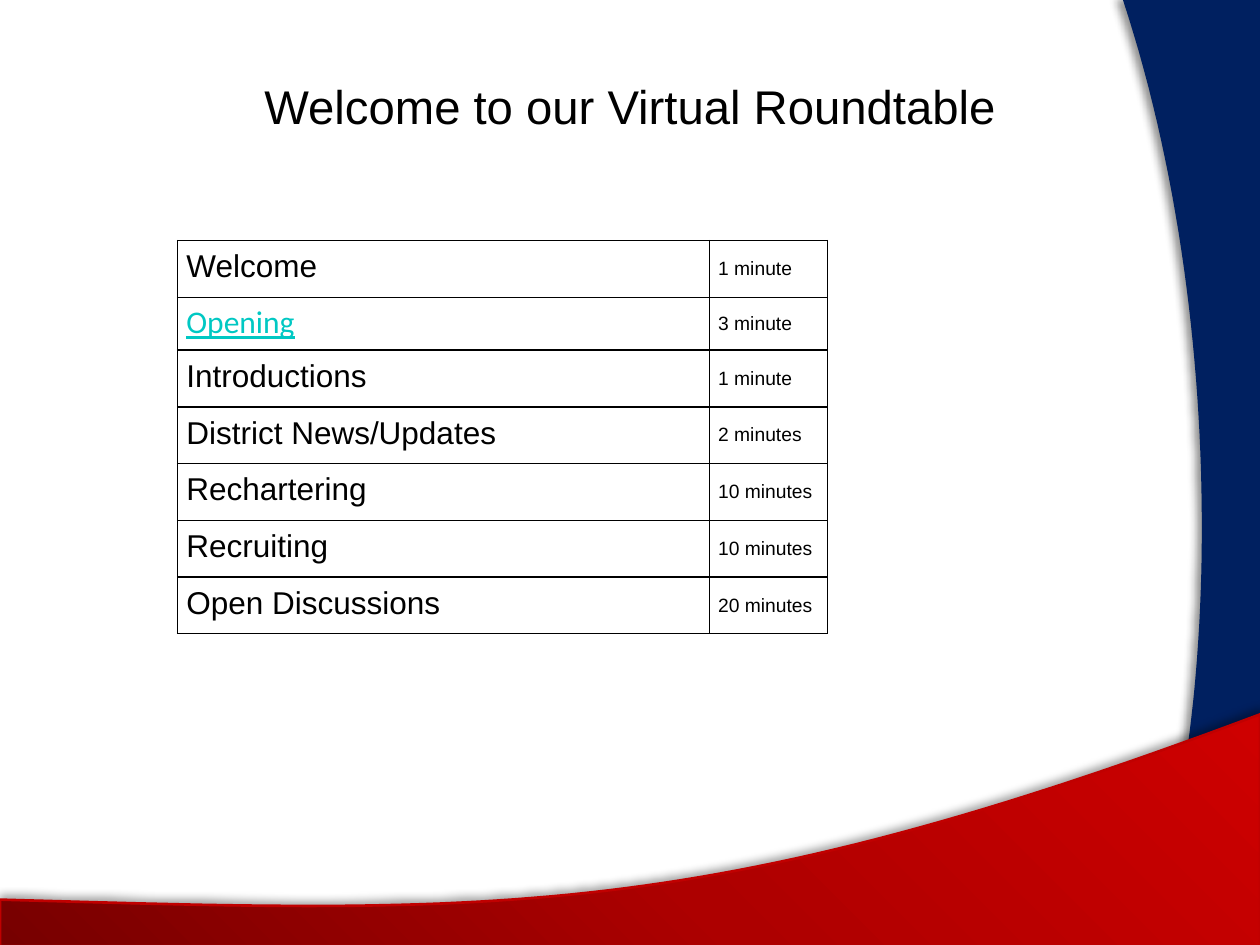
from lxml.etree import SubElement
from pptx import Presentation
from pptx.dml.color import RGBColor
from pptx.enum.text import MSO_ANCHOR as Anchor, PP_ALIGN as Align
from pptx.oxml import parse_xml
from pptx.oxml.ns import nsdecls, qn
from pptx.util import Inches, Pt

AGENDA = [
    ("Welcome", "1 minute"),
    ("Opening", "3 minute"),
    ("Introductions", "1 minute"),
    ("District News/Updates", "2 minutes"),
    ("Rechartering", "10 minutes"),
    ("Recruiting", "10 minutes"),
    ("Open Discussions", "20 minutes"),
]
LINKED_TOPIC = "Opening"
COLUMN_WIDTHS = (4.22, 0.94)
ROW_HEIGHT, LINKED_ROW_HEIGHT = 0.45, 0.42
CURVE_STEPS = 60


def color(hex_string):
    return RGBColor.from_string(hex_string)


def bezier(start, control_1, control_2, end):
    """Return points along a cubic curve, both ends included."""
    points = []
    for step in range(CURVE_STEPS + 1):
        t = step / CURVE_STEPS
        weights = ((1 - t) ** 3, 3 * t * (1 - t) ** 2, 3 * t * t * (1 - t), t ** 3)
        points.append(tuple(
            sum(w * value for w, value in zip(weights, axis))
            for axis in zip(start, control_1, control_2, end)))
    return points


def add_swoosh(slide, points, line_color):
    first, *rest = [(Inches(x), Inches(y)) for x, y in points]
    builder = slide.shapes.build_freeform(*first, scale=1.0)
    builder.add_line_segments(rest, close=True)
    swoosh = builder.convert_to_shape()
    swoosh.line.color.rgb = color(line_color)
    swoosh.line.width = Pt(1.5)
    return swoosh


def fill_gradient(shape, stops, angle):
    """Fill with (percent, hex) stops; the angle runs clockwise."""
    stop_xml = "".join(
        f'<a:gs pos="{percent * 1000}"><a:srgbClr val="{shade}"/></a:gs>'
        for percent, shade in stops)
    gradient = parse_xml(
        f'<a:gradFill {nsdecls("a")} rotWithShape="1"><a:gsLst>{stop_xml}</a:gsLst>'
        f'<a:lin ang="{angle * 60000}" scaled="0"/></a:gradFill>')
    shape._element.spPr.find(qn("a:custGeom")).addnext(gradient)


def add_shadow(shape, opacity, blur, distance, angle):
    shape._element.spPr.append(parse_xml(
        f'<a:effectLst {nsdecls("a")}><a:outerShdw blurRad="{Pt(blur)}" '
        f'dist="{Pt(distance)}" dir="{angle * 60000}" algn="ctr" rotWithShape="0">'
        f'<a:srgbClr val="000000"><a:alpha val="{opacity * 1000}"/></a:srgbClr>'
        f'</a:outerShdw></a:effectLst>'))


def add_run(paragraph, text, size, font="Arial", shade="000000"):
    run = paragraph.add_run()
    run.text = text
    run.font.size = Pt(size)
    run.font.name = font
    run.font.color.rgb = color(shade)
    return run


def add_title(slide, text):
    title = slide.shapes.add_textbox(Inches(1), Inches(0.22), Inches(8), Inches(1.23))
    frame = title.text_frame
    frame.word_wrap = True
    frame.vertical_anchor = Anchor.MIDDLE
    frame.margin_left = frame.margin_right = Inches(0.07)
    frame.margin_top = frame.margin_bottom = Inches(0.04)
    paragraph = frame.paragraphs[0]
    paragraph.alignment = Align.CENTER
    add_run(paragraph, text, 27)


def style_cell(cell):
    """Leave the cell unfilled, with thin black borders and even margins."""
    cell.margin_left = cell.margin_right = Inches(0.07)
    cell.margin_top = cell.margin_bottom = Inches(0.07)
    cell.fill.background()
    properties = cell._tc.get_or_add_tcPr()
    for position, side in enumerate(("lnL", "lnR", "lnT", "lnB")):
        border = SubElement(properties, qn(f"a:{side}"), w=str(Pt(1)))
        solid = SubElement(border, qn("a:solidFill"))
        SubElement(solid, qn("a:srgbClr"), val="000000")
        properties.insert(position, border)


def add_agenda(slide):
    heights = [LINKED_ROW_HEIGHT if topic == LINKED_TOPIC else ROW_HEIGHT
               for topic, _ in AGENDA]
    table = slide.shapes.add_table(
        len(AGENDA), len(COLUMN_WIDTHS), Inches(1.41), Inches(1.91),
        Inches(sum(COLUMN_WIDTHS)), Inches(sum(heights))).table
    table.first_row = table.horz_banding = False
    for column, width in zip(table.columns, COLUMN_WIDTHS):
        column.width = Inches(width)

    for row, height, (topic, duration) in zip(table.rows, heights, AGENDA):
        row.height = Inches(height)
        topic_cell, duration_cell = row.cells
        for cell in row.cells:
            style_cell(cell)
        paragraph = topic_cell.text_frame.paragraphs[0]
        if topic == LINKED_TOPIC:
            paragraph.line_spacing = 0.9
            add_run(paragraph, topic, 18, "Calibri", "00C8C3").font.underline = True
        else:
            add_run(paragraph, topic, 18)
        duration_cell.vertical_anchor = Anchor.MIDDLE
        add_run(duration_cell.text_frame.paragraphs[0], duration, 11)


def main():
    deck = Presentation()
    deck.slide_width, deck.slide_height = Inches(10), Inches(7.5)
    slide = deck.slides.add_slide(deck.slide_layouts[6])

    right_edge = bezier((9.03, 7.49), (9.65, 6.18), (9.83, 2.74), (8.92, -0.01))
    blue_swoosh = add_swoosh(slide, [(10, 0.01), (10, 7.49), *right_edge], "002060")
    blue_swoosh.fill.solid()
    blue_swoosh.fill.fore_color.rgb = color("002060")
    add_shadow(blue_swoosh, 44, 5, 4, 180)

    top_edge = bezier((10, 5.67), (5.59, 7.33), (3.91, 7.25), (0, 7.14))
    red_swoosh = add_swoosh(slide, [(0, 7.51), (10, 7.51), *top_edge], "C00000")
    fill_gradient(red_swoosh, [(0, "770000"), (50, "AD0000"), (100, "CE0000")], 315)
    add_shadow(red_swoosh, 35, 5, 3.5, 270)

    add_title(slide, "Welcome to our Virtual Roundtable")
    add_agenda(slide)
    deck.save("out.pptx")


if __name__ == "__main__":
    main()
